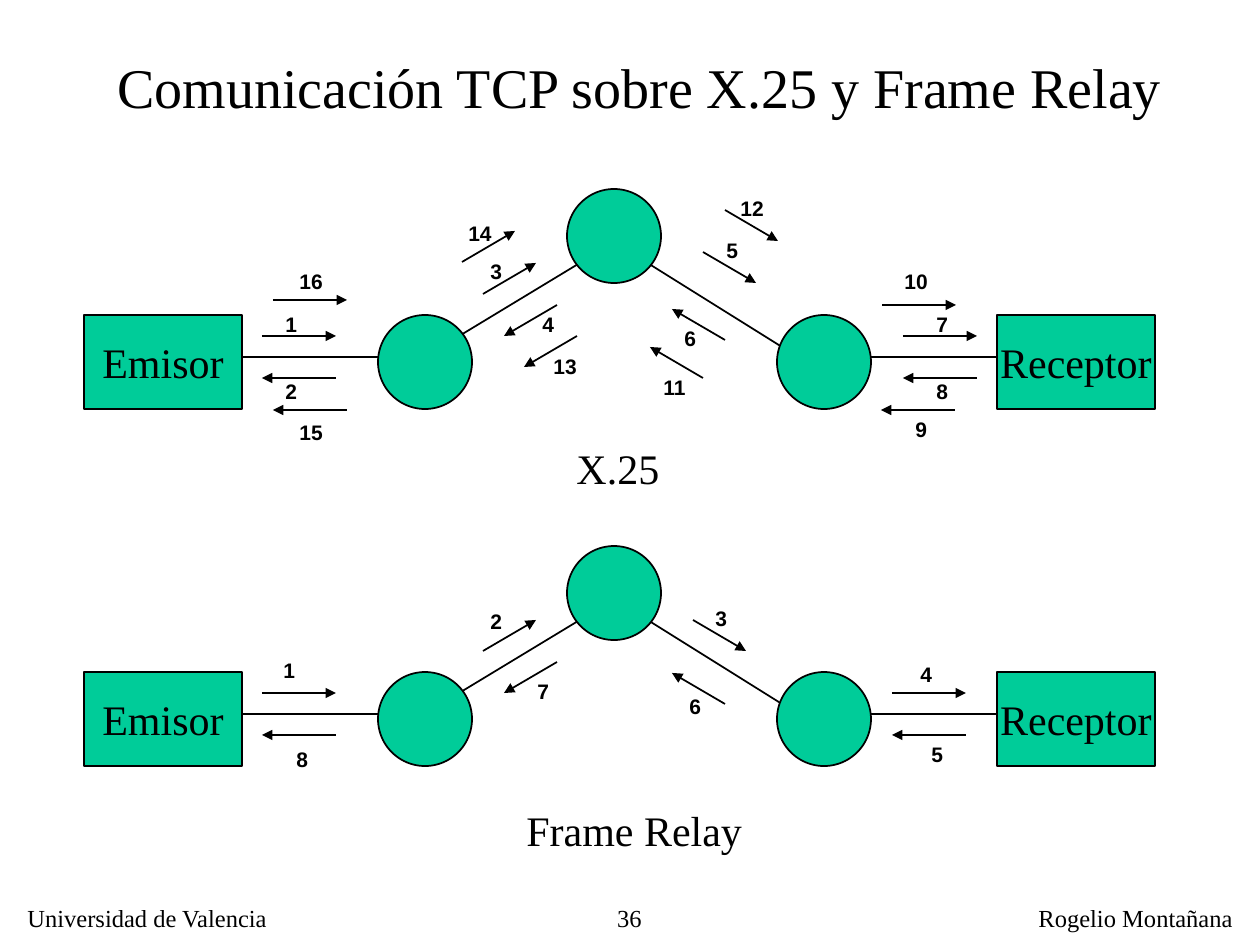
from dataclasses import dataclass

from lxml.etree import SubElement
from pptx import Presentation
from pptx.dml.color import RGBColor as RGB
from pptx.enum.shapes import MSO_CONNECTOR as CONN, MSO_SHAPE as SHAPE
from pptx.enum.text import MSO_ANCHOR as ANCHOR, MSO_AUTO_SIZE as AUTO, PP_ALIGN as ALIGN
from pptx.oxml.ns import qn
from pptx.util import Emu, Pt


@dataclass(frozen=True)
class Theme:
    """Colours, fonts and type sizes of the slide."""
    ink: RGB = RGB(0, 0, 0)
    node: RGB = RGB(0x00, 0xCC, 0x99)
    serif: str = "Times New Roman"
    sans: str = "Arial"
    title: int = 32
    body: int = 24
    footer: int = 14
    step: int = 12
    line: int = 1


T = Theme()
SCALE = 914400 / 126
FRAME_RELAY_DROP = 357
NODE = 94
FIXED = {"word_wrap": True, "auto_size": AUTO.NONE}

LINKS = [(220, 357, 410, 357), (840, 357, 1030, 357),
         (441, 347, 598, 252), (630, 252, 798, 357)]
SWITCHES = [(567, 189), (777, 315), (378, 315)]
HOSTS = [("Receptor", 997), ("Emisor", 84)]

HEADINGS = {"E": (74, 0), "W": (-74, 0), "NE": (53, -31),
            "SE": (53, 31), "NW": (-53, -31), "SW": (-53, 31)}

X25_STEPS = [
    ("E", 262, 336, 273, 305), ("W", 336, 378, 273, 372),
    ("NE", 483, 294, 478, 252), ("SW", 557, 305, 530, 305),
    ("SE", 703, 252, 714, 231), ("NW", 725, 340, 672, 319),
    ("E", 903, 336, 924, 305), ("W", 977, 378, 924, 372),
    ("W", 955, 410, 903, 410), ("E", 882, 305, 892, 262),
    ("NW", 703, 378, 651, 368), ("SE", 725, 210, 728, 189),
    ("SW", 577, 336, 541, 347), ("NE", 462, 262, 456, 214),
    ("W", 347, 410, 287, 413), ("E", 273, 300, 287, 262),
]
FRAME_RELAY_STEPS = [
    ("E", 262, 693, 271, 651), ("NE", 483, 651, 478, 602),
    ("SE", 693, 620, 703, 599), ("E", 892, 693, 908, 655),
    ("W", 966, 735, 919, 735), ("NW", 725, 704, 677, 687),
    ("SW", 557, 662, 525, 672), ("W", 336, 735, 284, 740),
]


def px(*lengths):
    """Turn pixel lengths into EMU."""
    return [Emu(round(n * SCALE)) for n in lengths]


def assign(obj, values):
    """Set each attribute in values on obj."""
    for name, value in values.items():
        setattr(obj, name, value)


def write(s, text, size, font=T.serif, bold=False, align=ALIGN.LEFT, **frame):
    """Write one formatted paragraph into a shape."""
    tf = s.text_frame
    assign(tf, {"word_wrap": False, **frame})
    p = tf.paragraphs[0]
    p.alignment = align
    r = p.add_run()
    r.text = text
    assign(r.font, {"name": font, "size": Pt(size), "bold": bold})
    r.font.color.rgb = T.ink


def add_label(sp, text, box, size, **fmt):
    """Add a text box that grows with its text unless told otherwise."""
    s = sp.add_textbox(*px(*box))
    write(s, text, size, **{"auto_size": AUTO.SHAPE_TO_FIT_TEXT, **fmt})


def add_line(sp, x1, y1, x2, y2, arrow=False):
    """Add a straight line, with an arrowhead at its end if asked."""
    s = sp.add_connector(CONN.STRAIGHT, *px(x1, y1, x2, y2))
    s.line.color.rgb = T.ink
    s.line.width = Pt(T.line)
    if arrow:
        SubElement(s.line._get_or_add_ln(), qn("a:tailEnd"), type="triangle")
    SubElement(s._element.spPr, qn("a:effectLst"))


def add_node(sp, kind, *box):
    """Add a filled and outlined network node."""
    s = sp.add_shape(kind, *px(*box))
    s.shadow.inherit = False
    s.fill.solid()
    s.fill.fore_color.rgb = T.node
    s.line.color.rgb = T.ink
    s.line.width = Pt(T.line)
    return s


def add_network(sp, drop):
    """Add the links, switches and hosts of one network."""
    for x1, y1, x2, y2 in LINKS:
        add_line(sp, x1, y1 + drop, x2, y2 + drop)
    for x, y in SWITCHES:
        add_node(sp, SHAPE.OVAL, x, y + drop, NODE, NODE)
    for name, x in HOSTS:
        s = add_node(sp, SHAPE.RECTANGLE, x, 315 + drop, 158, NODE)
        write(s, name, T.body, align=ALIGN.CENTER, vertical_anchor=ANCHOR.MIDDLE)


def add_steps(sp, steps):
    """Add the numbered arrows of one exchange."""
    for number, (heading, x, y, left, top) in enumerate(steps, 1):
        dx, dy = HEADINGS[heading]
        add_line(sp, x, y, x + dx, y + dy, arrow=True)
        width = 37 if number < 10 else 49
        add_label(sp, str(number), (left, top, width, 38), T.step, font=T.sans, bold=True)


def main():
    """Build the slide and save it."""
    prs = Presentation()
    assign(prs, dict(zip(("slide_width", "slide_height"), px(1260, 945))))
    sp = prs.slides.add_slide(prs.slide_layouts[6]).shapes

    add_label(sp, "36", (520, 897, 134, 39), T.footer, align=ALIGN.RIGHT, **FIXED)
    add_label(sp, "Universidad de Valencia", (15, 897, 268, 42), T.footer)
    add_label(sp, "Rogelio Montañana", (1026, 897, 230, 42), T.footer, **FIXED)
    add_label(sp, "Comunicación TCP sobre X.25 y Frame Relay", (105, 46, 1103, 79),
              T.title, word_wrap=True)

    for drop, steps in ((0, X25_STEPS), (FRAME_RELAY_DROP, FRAME_RELAY_STEPS)):
        add_network(sp, drop)
        add_steps(sp, steps)

    add_label(sp, "X.25", (564, 436, 108, 63), T.body)
    add_label(sp, "Frame Relay", (514, 798, 241, 63), T.body)
    prs.save("out.pptx")


if __name__ == "__main__":
    main()
